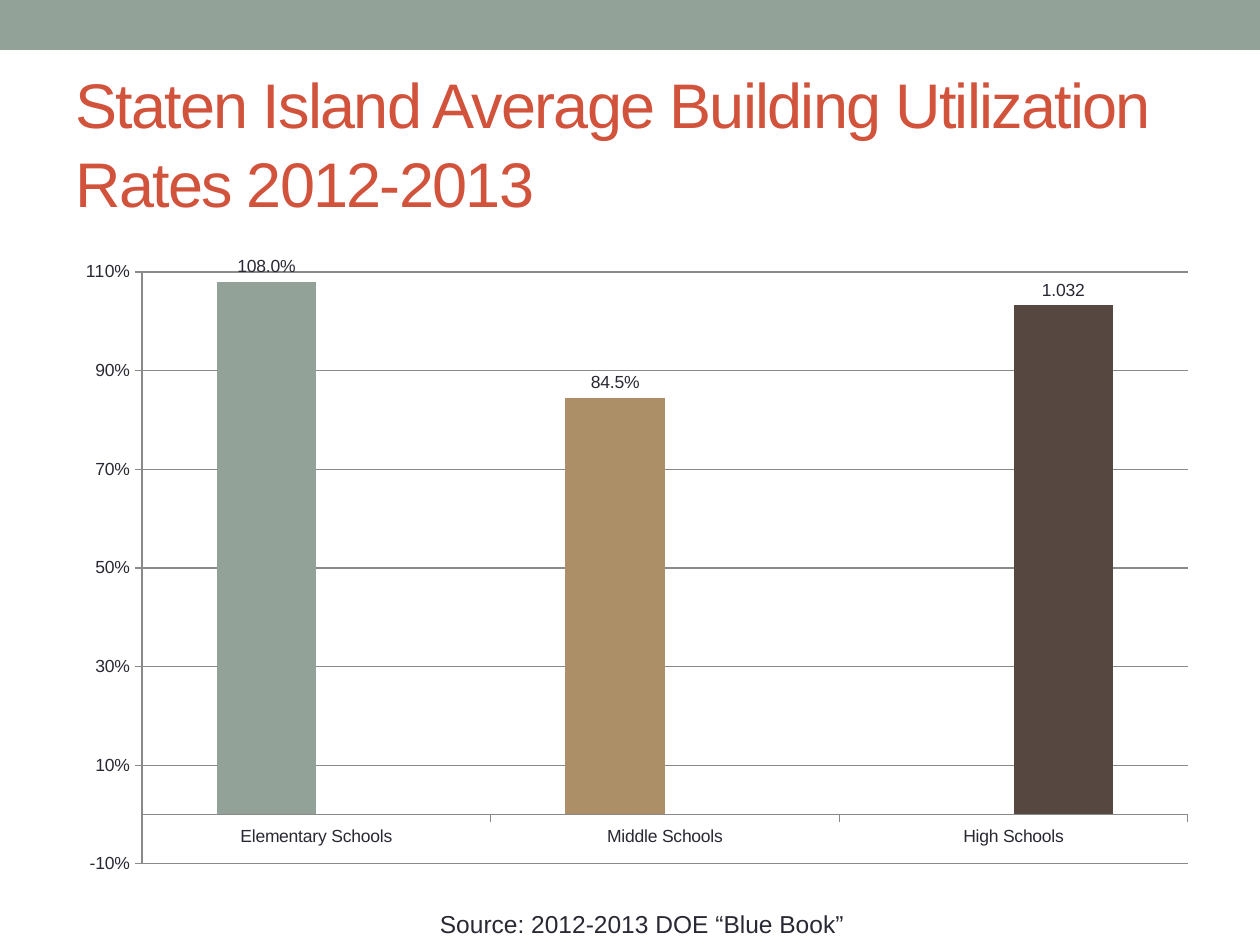
from dataclasses import dataclass
from typing import Optional

import pptx
import pptx.chart.axis
import pptx.chart.data
import pptx.dml.color
import pptx.enum.chart
import pptx.enum.shapes
import pptx.enum.text
import pptx.oxml
import pptx.oxml.ns
import pptx.util

PX_PER_INCH = 126


@dataclass(frozen=True)
class Theme:
    font: str = "Arial"
    sage: str = "93A299"
    tan: str = "AD8F67"
    brown: str = "564841"
    title: str = "D2533C"
    text: str = "292934"
    line: str = "898989"
    title_size: int = 36
    source_size: int = 14
    chart_size: int = 10


@dataclass(frozen=True)
class Box:
    left: int
    top: int
    width: int
    height: int

    def emu(self) -> tuple:
        return tuple(px(n) for n in (self.left, self.top, self.width, self.height))


@dataclass(frozen=True)
class Caption:
    text: str
    box: Box
    size: int
    color: str
    align: pptx.enum.text.PP_ALIGN
    line_spacing: float = 1.0
    tracking: int = 0  # hundredths of a point


@dataclass(frozen=True)
class Series:
    name: str
    values: tuple[Optional[float], ...]
    color: str
    label_format: str
    point_colors: tuple[tuple[int, str], ...] = ()


THEME = Theme()
BAND = Box(0, 0, 1260, 50)
CHART = Box(63, 251, 1148, 638)
PLOT = Box(142, 272, 1046, 592)
CAPTIONS = (
    Caption("Staten Island Average Building Utilization Rates 2012-2013",
            Box(63, 73, 1134, 136), THEME.title_size, THEME.title,
            pptx.enum.text.PP_ALIGN.LEFT, 1.05, -100),
    Caption("Source: 2012-2013 DOE “Blue Book”",
            Box(45, 902, 1194, 43), THEME.source_size, THEME.text,
            pptx.enum.text.PP_ALIGN.CENTER),
)
CATEGORIES = ("Elementary Schools", "Middle Schools", "High Schools")
SERIES = (
    Series("Series 1", (1.08, 0.845, None), THEME.tan, "0.0%", ((0, THEME.sage),)),
    Series("Series 2", (None, None, 1.032), THEME.brown, "General"),
)


def px(n: int) -> pptx.util.Emu:
    return pptx.util.Emu(round(n * 914400 / PX_PER_INCH))


def rgb(color: str) -> pptx.dml.color.RGBColor:
    return pptx.dml.color.RGBColor.from_string(color)


def fill_solid(fmt, color: str) -> None:
    fmt.fill.solid()
    fmt.fill.fore_color.rgb = rgb(color)


def style_font(font, size: int, color: str) -> None:
    font.name = THEME.font
    font.size = pptx.util.Pt(size)
    font.color.rgb = rgb(color)


def add_band(s) -> None:
    sp = s.shapes.add_shape(pptx.enum.shapes.MSO_SHAPE.RECTANGLE, *BAND.emu())
    sp.shadow.inherit = False
    fill_solid(sp, THEME.sage)
    sp.line.fill.background()


def add_caption(s, caption: Caption) -> None:
    tf = s.shapes.add_textbox(*caption.box.emu()).text_frame
    tf.word_wrap = True
    tf.vertical_anchor = pptx.enum.text.MSO_ANCHOR.MIDDLE
    p = tf.paragraphs[0]
    p.alignment = caption.align
    p.line_spacing = caption.line_spacing
    r = p.add_run()
    r.text = caption.text
    style_font(r.font, caption.size, caption.color)
    if caption.tracking:
        r.font._element.set("spc", str(caption.tracking))


def style_axis(axis) -> None:
    axis.major_tick_mark = pptx.enum.chart.XL_TICK_MARK.OUTSIDE
    axis.minor_tick_mark = pptx.enum.chart.XL_TICK_MARK.NONE
    axis.format.line.color.rgb = rgb(THEME.line)
    axis.format.line.width = pptx.util.Pt(0.75)


def place_plot(chart) -> None:
    """Fix the inner plot area as fractions of the chart frame."""
    fractions = {
        "x": (PLOT.left - CHART.left) / CHART.width,
        "y": (PLOT.top - CHART.top) / CHART.height,
        "w": PLOT.width / CHART.width,
        "h": PLOT.height / CHART.height,
    }
    modes = '<c:xMode val="edge"/><c:yMode val="edge"/>'
    sizes = "".join(f'<c:{k} val="{v:.4f}"/>' for k, v in fractions.items())
    layout = pptx.oxml.parse_xml(
        f'<c:layout {pptx.oxml.ns.nsdecls("c")}><c:manualLayout>'
        f'<c:layoutTarget val="inner"/>{modes}{sizes}</c:manualLayout></c:layout>')
    plot_area = chart._chartSpace.chart.plotArea
    for old in plot_area.findall(pptx.oxml.ns.qn("c:layout")):
        plot_area.remove(old)
    plot_area.insert(0, layout)


def style_series(ser, series: Series) -> None:
    fill_solid(ser.format, series.color)
    ser.invert_if_negative = False
    for index, color in series.point_colors:
        fill_solid(ser.points[index].format, color)
    labels = ser.data_labels
    labels.show_value = True
    labels.number_format = series.label_format
    labels.number_format_is_linked = False
    labels.position = pptx.enum.chart.XL_LABEL_POSITION.OUTSIDE_END
    style_font(labels.font, THEME.chart_size, THEME.text)


def add_utilization_chart(s) -> None:
    data = pptx.chart.data.CategoryChartData()
    data.categories = CATEGORIES
    for series in SERIES:
        data.add_series(series.name, series.values, series.label_format)
    chart = s.shapes.add_chart(
        pptx.enum.chart.XL_CHART_TYPE.COLUMN_CLUSTERED, *CHART.emu(), data).chart
    chart.has_title = False
    chart.has_legend = False
    style_font(chart.font, THEME.chart_size, THEME.text)
    place_plot(chart)

    style_axis(chart.category_axis)
    axis = chart.value_axis
    style_axis(axis)
    axis.minimum_scale, axis.maximum_scale, axis.major_unit = -0.1, 1.1, 0.2
    axis.tick_labels.number_format = "0%"
    axis.tick_labels.number_format_is_linked = False
    axis.has_major_gridlines = True
    axis.major_gridlines.format.line.color.rgb = rgb(THEME.line)
    axis.major_gridlines.format.line.width = pptx.util.Pt(0.75)

    plot = chart.plots[0]
    plot.gap_width = 150
    plot.overlap = 0
    plot.vary_by_categories = False
    for ser, series in zip(plot.series, SERIES):
        style_series(ser, series)


def main() -> None:
    prs = pptx.Presentation()
    prs.slide_width, prs.slide_height = px(1260), px(945)
    s = prs.slides.add_slide(prs.slide_layouts[6])
    add_band(s)
    add_utilization_chart(s)
    for caption in CAPTIONS:
        add_caption(s, caption)
    prs.save("out.pptx")


if __name__ == "__main__":
    main()
